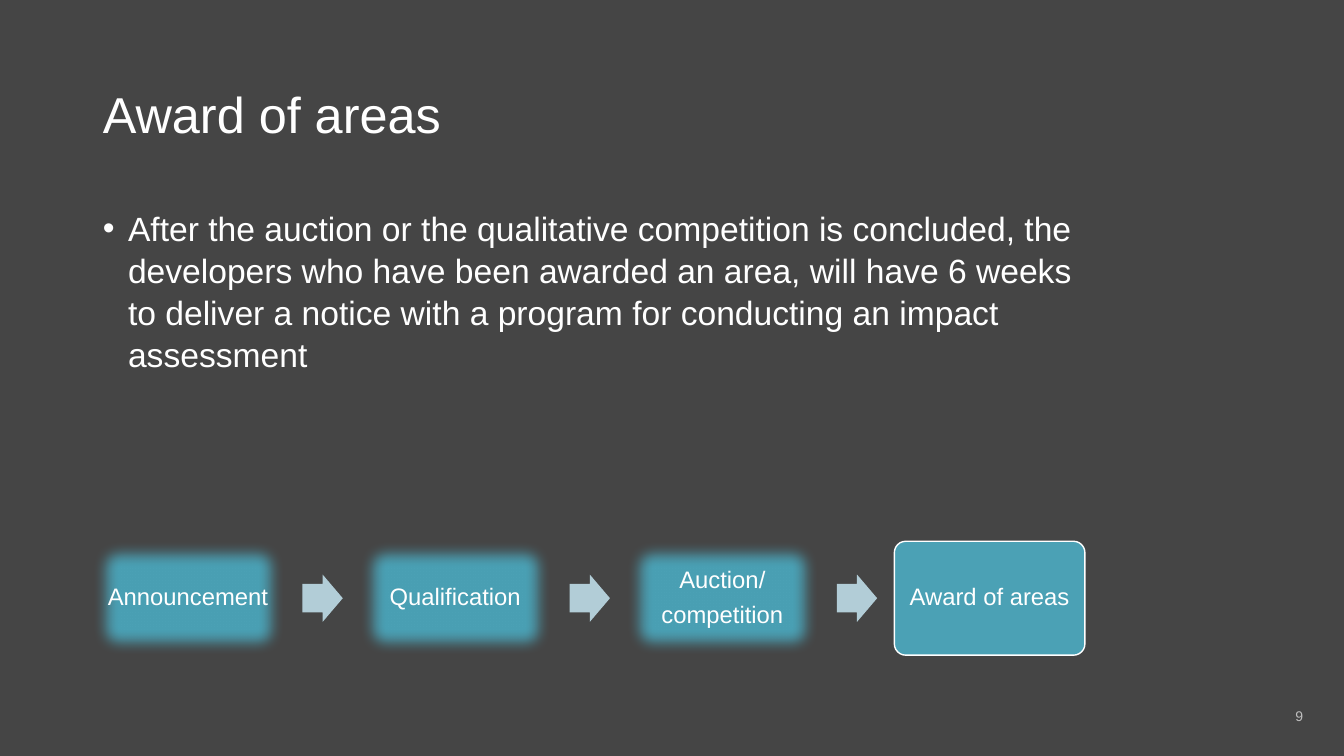
"""Build the slide about the award of areas."""
from dataclasses import dataclass

from lxml import etree
from pptx import Presentation
from pptx import util as u
from pptx.dml.color import RGBColor
from pptx.enum import shapes, text
from pptx.oxml import ns

EMU_PER_PX = 9144


@dataclass(frozen=True)
class Theme:
    """Colours, font and type sizes of the slide."""
    background: str = "454545"
    ink: str = "FFFFFF"
    muted: str = "BFBFBF"
    step: str = "4BA1B5"
    arrow: str = "B2CDD7"
    font: str = "Arial"
    title_size: int = 36
    body_size: int = 24
    step_size: int = 17
    number_size: int = 10


THEME = Theme()
STEPS = ("Announcement", "Qualification", "Auction/\ncompetition", "Award of areas")
CURRENT_STEP = "Award of areas"
STATEMENT = (
    "After the auction or the qualitative competition is concluded, the developers "
    "who have been awarded an area, will have 6 weeks to deliver a notice with a "
    "program for conducting an impact assessment"
)


def px(length):
    """Turn px into EMU."""
    return u.Emu(length * EMU_PER_PX)


def apply(target, values):
    """Set each attribute named in a dict of format values."""
    for name, value in values.items():
        setattr(target, name, value)


def place(shape, box):
    """Move a shape to a box given in px."""
    apply(shape, dict(zip(("left", "top", "width", "height"), map(px, box))))


def fill_solid(fill, colour):
    """Give a fill one solid colour."""
    fill.solid()
    fill.fore_color.rgb = RGBColor.from_string(colour)


def write(shape, wording, size, colour, frame_format, paragraph_format):
    """Write the wording into a shape and format its paragraphs."""
    frame = shape.text_frame
    frame.text = wording
    apply(frame, {"word_wrap": True, "auto_size": text.MSO_AUTO_SIZE.NONE, **frame_format})
    for paragraph in frame.paragraphs:
        apply(paragraph, paragraph_format)
        for run in paragraph.runs:
            apply(run.font, {"name": THEME.font, "size": u.Pt(size)})
            run.font.color.rgb = RGBColor.from_string(colour)


def add_bullet(paragraph, indent):
    """Give a paragraph a round bullet with a hanging indent in px."""
    properties = paragraph._p.get_or_add_pPr()
    properties.set("marL", str(px(indent)))
    properties.set("indent", str(px(-indent)))
    etree.SubElement(properties, ns.qn("a:buChar"), char="•")


def soften_edges(shape, radius):
    """Blur the outline of a shape by a radius in px."""
    effects = shape._element.spPr.find(ns.qn("a:effectLst"))
    etree.SubElement(effects, ns.qn("a:softEdge"), rad=str(px(radius)))


def add_title(slide, box):
    """Place the title in its box."""
    place(slide.shapes.title, box)
    write(slide.shapes.title, "Award of areas", THEME.title_size, THEME.ink,
          {"vertical_anchor": text.MSO_ANCHOR.MIDDLE},
          {"alignment": text.PP_ALIGN.LEFT})


def add_statement(slide, box):
    """Place the bulleted statement in its box."""
    body = slide.placeholders[1]
    place(body, box)
    write(body, STATEMENT, THEME.body_size, THEME.ink,
          {"vertical_anchor": text.MSO_ANCHOR.TOP},
          {"alignment": text.PP_ALIGN.LEFT, "line_spacing": 1.04, "space_before": u.Pt(0)})
    add_bullet(body.text_frame.paragraphs[0], 25)


def add_preset(slide, kind, box, colour, adjustments):
    """Add a filled preset shape without shadow or outline."""
    shape = slide.shapes.add_shape(kind, *map(px, box))
    shape.shadow.inherit = False
    fill_solid(shape.fill, colour)
    shape.line.fill.background()
    for index, value in enumerate(adjustments):
        shape.adjustments[index] = value
    return shape


def add_step(slide, box, wording):
    """Add one step, sharp when current and blurred otherwise."""
    step = add_preset(slide, shapes.MSO_SHAPE.ROUNDED_RECTANGLE, box, THEME.step, (0.1,))
    fill_solid(step.line.fill, THEME.ink)
    step.line.width = u.Pt(1)
    if wording != CURRENT_STEP:
        soften_edges(step, 14)
    margins = dict.fromkeys(
        ("margin_left", "margin_right", "margin_top", "margin_bottom"), px(7))
    write(step, wording, THEME.step_size, THEME.ink,
          {"vertical_anchor": text.MSO_ANCHOR.MIDDLE, **margins},
          {"alignment": text.PP_ALIGN.CENTER, "line_spacing": 0.9, "space_after": u.Pt(7)})


def add_process(slide, box):
    """Spread the steps evenly over the box with an arrow in each gap."""
    left, top, width, height = box
    step_width, arrow_width, arrow_height, arrow_gap = 189, 40, 47, 19
    pitch = (width - step_width) // (len(STEPS) - 1)
    for index, wording in enumerate(STEPS):
        step_left = left + index * pitch
        add_step(slide, (step_left, top, step_width, height), wording)
        if index < len(STEPS) - 1:
            arrow_box = (step_left + step_width + arrow_gap,
                         top + (height - arrow_height) // 2, arrow_width, arrow_height)
            add_preset(slide, shapes.MSO_SHAPE.RIGHT_ARROW, arrow_box,
                       THEME.arrow, (0.6, 0.5))


def add_page_number(slide, box):
    """Place the page number in its box."""
    write(slide.shapes.add_textbox(*map(px, box)), "9", THEME.number_size, THEME.muted,
          {"vertical_anchor": text.MSO_ANCHOR.MIDDLE},
          {"alignment": text.PP_ALIGN.CENTER})


def main():
    """Build and save the presentation."""
    presentation = Presentation()
    apply(presentation, {"slide_width": px(1333), "slide_height": px(750)})
    slide = presentation.slides.add_slide(presentation.slide_layouts[1])
    fill_solid(slide.background.fill, THEME.background)
    add_title(slide, (92, 40, 984, 145))
    add_statement(slide, (92, 200, 984, 476))
    add_page_number(slide, (1264, 691, 49, 39))
    add_process(slide, (92, 537, 984, 113))
    presentation.save("out.pptx")


if __name__ == "__main__":
    main()
